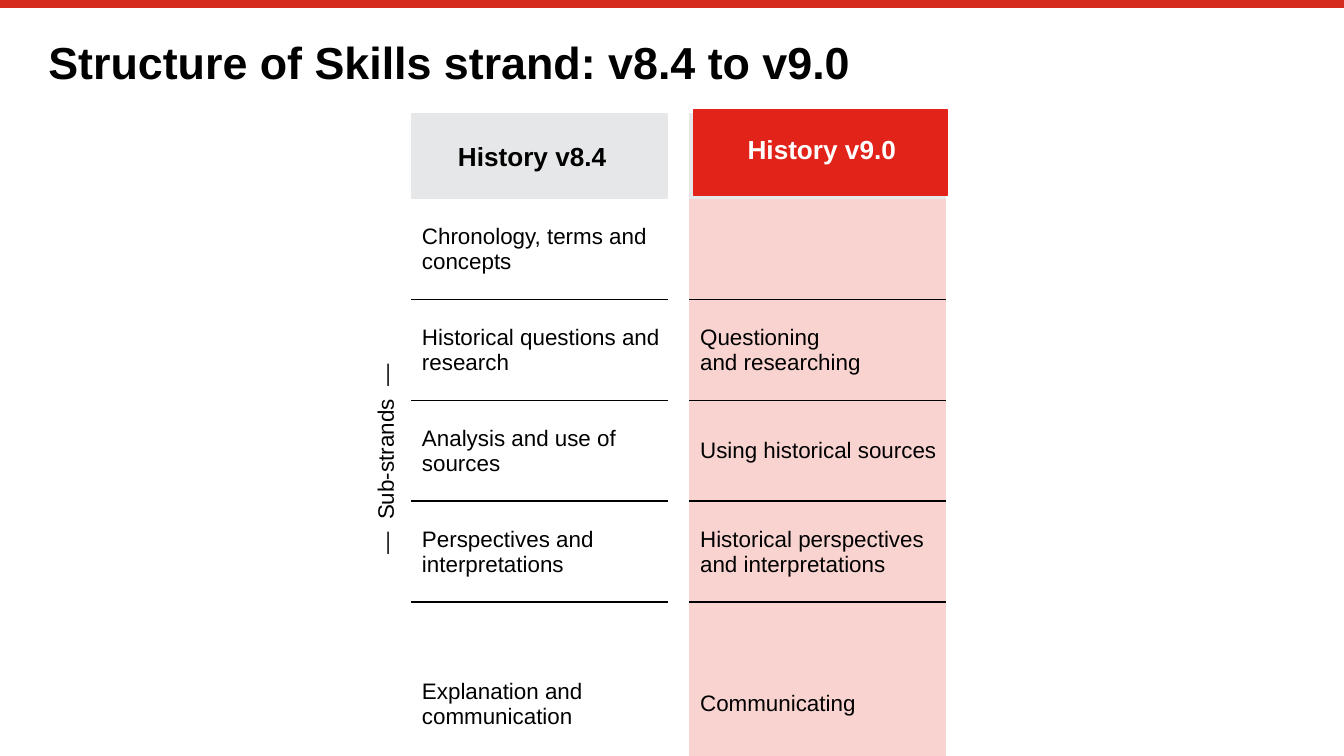
from dataclasses import dataclass

from lxml import etree
from pptx import Presentation
from pptx.dml.color import RGBColor
from pptx.enum.shapes import MSO_CONNECTOR, MSO_SHAPE
from pptx.enum.text import MSO_ANCHOR, PP_ALIGN
from pptx.oxml.ns import qn
from pptx.util import Inches, Pt

STRAIGHT = MSO_CONNECTOR.STRAIGHT
RECTANGLE = MSO_SHAPE.RECTANGLE
TOP, MIDDLE = MSO_ANCHOR.TOP, MSO_ANCHOR.MIDDLE
LEFT, CENTER = PP_ALIGN.LEFT, PP_ALIGN.CENTER
NO_STYLE_NO_GRID = "{2D5ABB26-0587-4C30-8999-92F81FD0307C}"


@dataclass(frozen=True)
class Theme:
    font: str = "Arial"
    black: str = "000000"
    white: str = "FFFFFF"
    bar: str = "D52B1E"
    red: str = "E2231A"
    pink: str = "F8D3D0"
    grey: str = "E6E7E8"
    title_size: int = 24
    heading_size: int = 14
    body_size: int = 12


THEME = Theme()
TITLE = "Structure of Skills strand: v8.4 to v9.0"
SIDE_LABEL = "—  Sub-strands  —"
OLD_HEADING = "History v8.4"
NEW_HEADING = "History v9.0"
SUB_STRANDS = [
    ("Chronology, terms and concepts", ""),
    ("Historical questions and research", "Questioning \vand researching"),
    ("Analysis and use of sources", "Using historical sources"),
    ("Perspectives and interpretations", "Historical perspectives and interpretations"),
    ("Explanation and communication", "Communicating"),
]
COLUMN_WIDTHS = [0.4, 1.91, 0.16, 1.91, 0.16]
ROW_HEIGHTS = [0.64] + [0.75] * 4 + [0.61]
OLD_COLUMN, NEW_COLUMN = 1, 3
TABLE_LEFT, TABLE_TOP = 2.66, 0.84


def color(value):
    return RGBColor.from_string(value)


def box(left, top, width, height):
    return [Inches(length) for length in (left, top, width, height)]


def write(frame, text, size, ink=THEME.black, bold=False, align=None, spacing=None):
    frame.text = text
    paragraph = frame.paragraphs[0]
    paragraph.alignment = align
    paragraph.line_spacing = spacing
    font = paragraph.font
    font.name, font.size, font.bold = THEME.font, Pt(size), bold
    font.color.rgb = color(ink)


def set_margins(item, left=0, right=0, top=0):
    item.margin_left, item.margin_right = Inches(left), Inches(right)
    item.margin_top, item.margin_bottom = Inches(top), 0


def add_border(cell, side):
    line = etree.Element(qn(f"a:{side}"), w=str(Pt(1)))
    fill = etree.SubElement(line, qn("a:solidFill"))
    etree.SubElement(fill, qn("a:srgbClr"), val=THEME.black)
    cell._tc.get_or_add_tcPr().insert(0, line)


def add_top_bar(slide, width):
    y = Inches(0.03)
    bar = slide.shapes.add_connector(STRAIGHT, 0, y, width, y)
    bar.line.color.rgb = color(THEME.bar)
    bar.line.width = Pt(4.2)
    etree.SubElement(bar._element.spPr, qn("a:effectLst"))


def add_title(slide):
    title = slide.shapes.title
    title.left, title.top, title.width, title.height = box(0.36, 0.3, 9.29, 0.39)
    frame = title.text_frame
    set_margins(frame)
    frame.vertical_anchor = TOP
    write(frame, TITLE, THEME.title_size, bold=True, align=LEFT, spacing=0.9)


def add_comparison(slide):
    frame = slide.shapes.add_table(
        len(ROW_HEIGHTS), len(COLUMN_WIDTHS),
        *box(TABLE_LEFT, TABLE_TOP, sum(COLUMN_WIDTHS), sum(ROW_HEIGHTS)))
    table = frame.table
    table.first_row = table.horz_banding = False
    table._tbl.tblPr.find(qn("a:tableStyleId")).text = NO_STYLE_NO_GRID
    for column, width in zip(table.columns, COLUMN_WIDTHS):
        column.width = Inches(width)
    for row, height in zip(table.rows, ROW_HEIGHTS):
        row.height = Inches(height)
    for cell in table.iter_cells():
        cell.fill.background()
        set_margins(cell)

    label = table.cell(0, 0)
    label.merge(table.cell(len(SUB_STRANDS), 0))
    set_margins(label, top=0.1)
    label._tc.get_or_add_tcPr().set("vert", "vert270")
    write(label.text_frame, SIDE_LABEL, THEME.body_size, align=CENTER, spacing=1.1)

    for column in (OLD_COLUMN, NEW_COLUMN):
        fill = table.cell(0, column).fill
        fill.solid()
        fill.fore_color.rgb = color(THEME.grey)
    heading = table.cell(0, OLD_COLUMN)
    set_margins(heading, 0.05, 0.16)
    heading.vertical_anchor = MIDDLE
    write(heading.text_frame, OLD_HEADING, THEME.heading_size, bold=True,
          align=CENTER, spacing=1.1)

    for row, names in enumerate(SUB_STRANDS, start=1):
        for column, name in zip((OLD_COLUMN, NEW_COLUMN), names):
            cell = table.cell(row, column)
            set_margins(cell, left=0.08)
            cell.vertical_anchor = MIDDLE
            if name:
                write(cell.text_frame, name, THEME.body_size)
            if column == NEW_COLUMN:
                cell.fill.solid()
                cell.fill.fore_color.rgb = color(THEME.pink)
            if row < len(SUB_STRANDS):
                add_border(cell, "lnB")
            if row > 1:
                add_border(cell, "lnT")


def add_new_heading(slide):
    group = slide.shapes.add_group_shape()
    panel = group.shapes.add_shape(RECTANGLE, *box(5.16, 0.82, 1.89, 0.63))
    panel.shadow.inherit = False
    panel.fill.solid()
    panel.fill.fore_color.rgb = color(THEME.red)
    panel.line.color.rgb = color(THEME.red)
    panel.line.width = Pt(1)
    heading = group.shapes.add_textbox(*box(5.17, 0.94, 1.89, 0.32))
    heading.text_frame.word_wrap = True
    write(heading.text_frame, NEW_HEADING, THEME.heading_size, THEME.white,
          bold=True, align=CENTER)


def main():
    presentation = Presentation()
    presentation.slide_width = Inches(10)
    presentation.slide_height = presentation.slide_width * 9 // 16
    slide = presentation.slides.add_slide(presentation.slide_layouts[5])
    add_top_bar(slide, presentation.slide_width)
    add_title(slide)
    add_comparison(slide)
    add_new_heading(slide)
    presentation.save("out.pptx")


if __name__ == "__main__":
    main()
